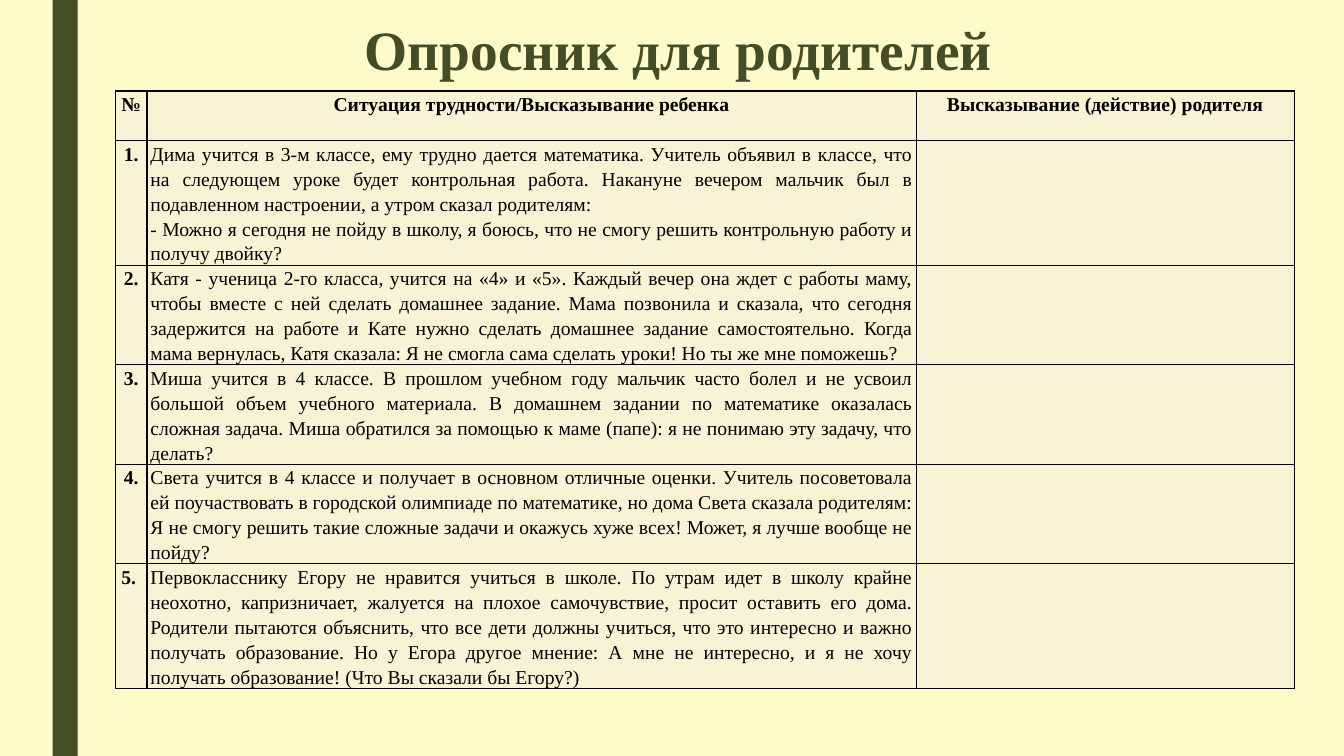
from lxml import etree
from pptx import Presentation
from pptx.dml.color import RGBColor
from pptx.enum.shapes import MSO_SHAPE
from pptx.enum.text import MSO_ANCHOR, MSO_AUTO_SIZE, PP_ALIGN
from pptx.oxml.ns import qn
from pptx.util import Pt

RECTANGLE = MSO_SHAPE.RECTANGLE
CENTER, JUSTIFY = PP_ALIGN.CENTER, PP_ALIGN.JUSTIFY
MIDDLE, TOP = MSO_ANCHOR.MIDDLE, MSO_ANCHOR.TOP
NO_FIT = MSO_AUTO_SIZE.NONE
TITLE_ONLY = 5

HEADINGS = ["№ ", "Ситуация трудности/Высказывание ребенка", "Высказывание (действие) родителя"]
SITUATIONS = [
    ("1.", 5, [
        "Дима учится в 3-м классе, ему трудно дается математика. Учитель объявил в классе, что на "
        "следующем уроке будет контрольная работа. Накануне вечером мальчик был в подавленном "
        "настроении, а утром сказал родителям:",
        "- Можно я сегодня не пойду в школу, я боюсь, что не смогу решить контрольную работу и "
        "получу двойку?"]),
    ("2.", 4, [
        "Катя - ученица 2-го класса, учится на «4» и «5». Каждый вечер она ждет с работы маму, "
        "чтобы вместе с ней сделать домашнее задание. Мама позвонила и сказала, что сегодня "
        "задержится на работе и Кате нужно сделать домашнее задание самостоятельно. Когда мама "
        "вернулась, Катя сказала: Я не смогла сама сделать уроки! Но ты же мне поможешь?"]),
    ("3.", 4, [
        "Миша учится в 4 классе. В прошлом учебном году мальчик часто болел и не усвоил большой "
        "объем учебного материала. В домашнем задании по математике оказалась сложная задача. "
        "Миша обратился за помощью к маме (папе): я не понимаю эту задачу, что делать?"]),
    ("4.", 4, [
        "Света учится в 4 классе и получает в основном отличные оценки. Учитель посоветовала ей "
        "поучаствовать в городской олимпиаде по математике, но дома Света сказала родителям: Я не "
        "смогу решить такие сложные задачи и окажусь хуже всех! Может, я лучше вообще не пойду?"]),
    ("5. ", 5, [
        "Первокласснику Егору не нравится учиться в школе. По утрам идет в школу крайне неохотно, "
        "капризничает, жалуется на плохое самочувствие, просит оставить его дома. Родители "
        "пытаются объяснить, что все дети должны учиться, что это интересно и важно получать "
        "образование. Но у Егора другое мнение: А мне не интересно, и я не хочу получать "
        "образование! (Что Вы сказали бы Егору?)"]),
]
HEADING_LINES = 2
LINE_HEIGHT = 17.75
COLUMN_WIDTHS = [22.5, 549.5, 270]


def color(value):
    return RGBColor.from_string(value)


class SlideBuilder:
    font = "Times New Roman"
    green, black = "444D26", "000000"
    background, cell_fill = "FEFAC9", "FAF2D4"

    def __init__(self, deck):
        self.page = deck.slides.add_slide(deck.slide_layouts[TITLE_ONLY])
        fill = self.page.background.fill
        fill.solid()
        fill.fore_color.rgb = color(self.background)

    def add_text(self, frame, texts, size, ink, bold, align, spacing):
        for index, text in enumerate(texts):
            para = frame.add_paragraph() if index else frame.paragraphs[0]
            para.alignment = align
            para.line_spacing = spacing
            span = para.add_run()
            span.text = text
            span.font.name = self.font
            span.font.size = Pt(size)
            span.font.bold = bold
            span.font.color.rgb = color(ink)

    def bar(self, left, top, width, height):
        box = self.page.shapes.add_shape(RECTANGLE, Pt(left), Pt(top), Pt(width), Pt(height))
        box.shadow.inherit = False
        box.fill.solid()
        box.fill.fore_color.rgb = color(self.green)
        box.line.fill.background()

    def title(self, text, left, top, width, height):
        box = self.page.shapes.title
        box.left, box.top, box.width, box.height = Pt(left), Pt(top), Pt(width), Pt(height)
        frame = box.text_frame
        frame.auto_size = NO_FIT
        frame.word_wrap = True
        frame.vertical_anchor = MIDDLE
        self.add_text(frame, [text], 39.6, self.green, True, CENTER, 0.89)

    def cell(self, cell, texts, bold, align):
        cell.margin_left = cell.margin_right = Pt(2.5)
        cell.margin_top = cell.margin_bottom = Pt(0)
        cell.vertical_anchor = TOP
        properties = cell._tc.get_or_add_tcPr()
        for side in ("a:lnL", "a:lnR", "a:lnT", "a:lnB"):
            line = etree.SubElement(properties, qn(side), w=str(Pt(1)))
            solid = etree.SubElement(line, qn("a:solidFill"))
            etree.SubElement(solid, qn("a:srgbClr"), val=self.black)
        cell.fill.solid()
        cell.fill.fore_color.rgb = color(self.cell_fill)
        self.add_text(cell.text_frame, texts, 14, self.black, bold, align, 1.15)

    def table(self, rows, left, top, widths, heights):
        frame = self.page.shapes.add_table(
            len(rows), len(widths), Pt(left), Pt(top), Pt(sum(widths)), Pt(sum(heights)))
        table = frame.table
        table.first_row = table.horz_banding = False
        for column, width in zip(table.columns, widths):
            column.width = Pt(width)
        for row, height, contents in zip(table.rows, heights, rows):
            row.height = Pt(height)
            for cell, content in zip(row.cells, contents):
                self.cell(cell, *content)


def main():
    deck = Presentation()
    deck.slide_width, deck.slide_height = Pt(960), Pt(540)
    builder = SlideBuilder(deck)
    builder.bar(37.5, 0, 18, 540)
    builder.title("Опросник для родителей ", 111.5, 11, 756, 54)
    rows = [[([heading], True, CENTER) for heading in HEADINGS]]
    heights = [HEADING_LINES * LINE_HEIGHT]
    for number, lines, texts in SITUATIONS:
        rows.append([([number], True, CENTER), (texts, False, JUSTIFY), ([], False, JUSTIFY)])
        heights.append(lines * LINE_HEIGHT)
    builder.table(rows, 82.5, 65, COLUMN_WIDTHS, heights)
    deck.save("out.pptx")


if __name__ == "__main__":
    main()
